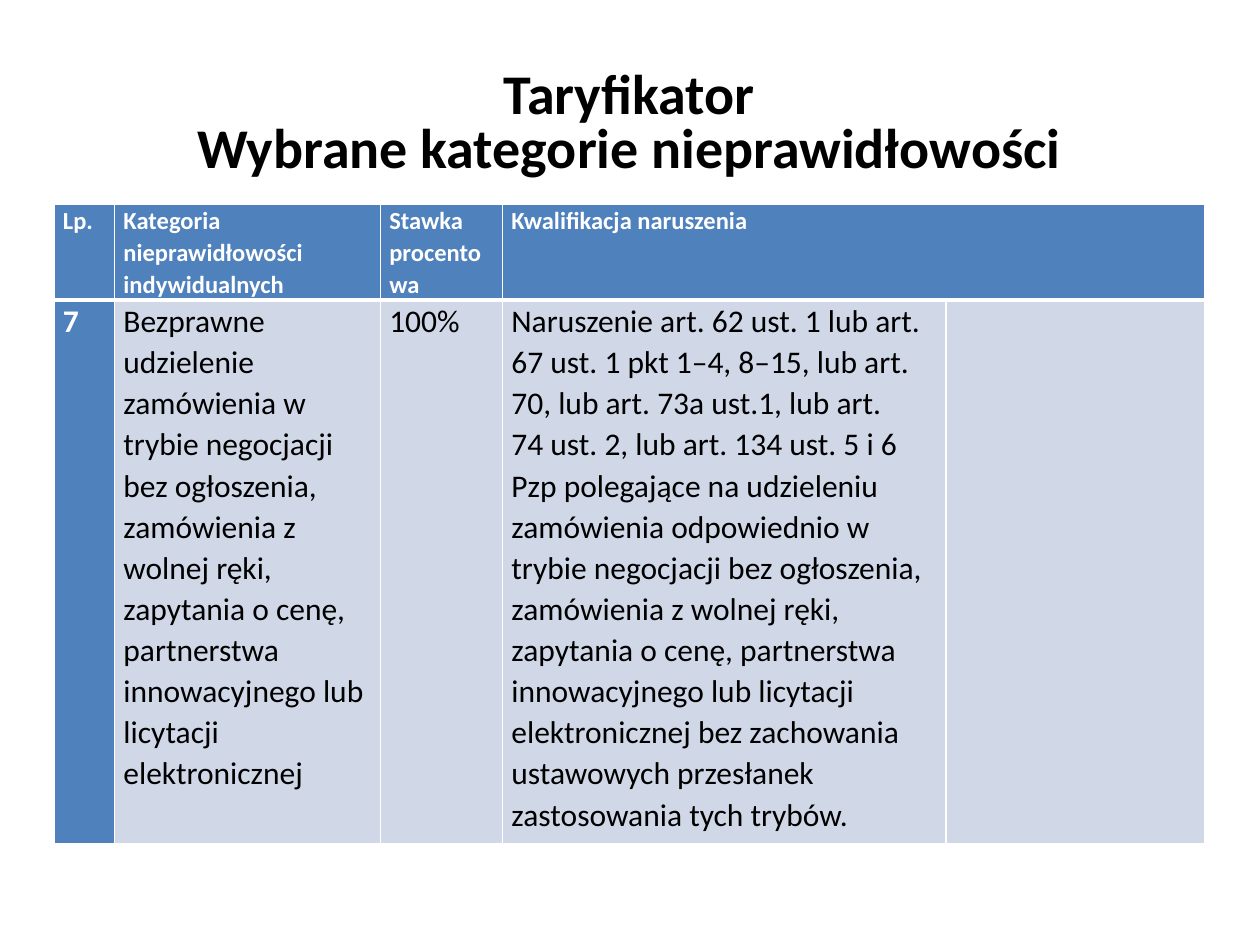
"""Build the tariff slide: a two-line title above a table of irregularity categories."""
from lxml.etree import SubElement
from pptx import Presentation
from pptx.dml.color import RGBColor as RGB
from pptx.enum.text import MSO_ANCHOR as ANCHOR, MSO_AUTO_SIZE as AUTOSIZE, PP_ALIGN as ALIGN
from pptx.oxml.ns import qn
from pptx.util import Inches, Pt

THEME = {
    "font": "Calibri",
    "title_size": 32, "header_size": 14, "body_size": 18,
    "dark": "000000", "light": "FFFFFF", "accent": "4F81BD", "band": "D0D8E8",
    "rule": 1, "header_rule": 3,
}

TITLE = ["Taryfikator", "Wybrane kategorie nieprawidłowości"]
HEADER = ["Lp.", "Kategoria nieprawidłowości indywidualnych", "Stawka procentowa",
          "Kwalifikacja naruszenia", ""]
ENTRY = [
    "7",
    ["Bezprawne udzielenie",
     "zamówienia w trybie negocjacji bez ogłoszenia, zamówienia z wolnej ręki, "
     "zapytania o cenę,",
     "partnerstwa innowacyjnego lub",
     "licytacji elektronicznej"],
    "100%",
    ["Naruszenie art. 62 ust. 1 lub art. 67 ust. 1 pkt 1–4, 8–15, lub art. 70, "
     "lub art. 73a ust.1, lub art.",
     "74 ust. 2, lub art. 134 ust. 5 i 6 Pzp polegające na udzieleniu zamówienia "
     "odpowiednio w trybie negocjacji bez ogłoszenia, zamówienia z wolnej ręki, "
     "zapytania o cenę, partnerstwa innowacyjnego lub licytacji elektronicznej bez "
     "zachowania ustawowych przesłanek zastosowania tych trybów."],
    "",
]
COLUMN_WIDTHS = [0.48, 2.11, 0.97, 3.52, 2.05]
ROW_HEIGHTS = [0.63, 4.32]
LEFT, TITLE_TOP, TABLE_TOP = 0.43, 0.52, 1.62
WIDTH = sum(COLUMN_WIDTHS)


def write(frame, lines, size, color, bold, spacing, align):
    frame.text = "\n".join(lines)
    for paragraph in frame.paragraphs:
        paragraph.alignment = align
        paragraph.line_spacing = spacing
        paragraph.space_before = paragraph.space_after = Pt(0)
        font = paragraph.font
        font.name, font.size, font.bold = THEME["font"], Pt(size), bold
        font.color.rgb = RGB.from_string(color)


def draw_borders(cell, top, bottom):
    widths = {"a:lnL": THEME["rule"], "a:lnR": THEME["rule"], "a:lnT": top, "a:lnB": bottom}
    for tag, width in widths.items():
        line = SubElement(cell._tc.get_or_add_tcPr(), qn(tag), w=str(Pt(width)))
        SubElement(SubElement(line, qn("a:solidFill")), qn("a:srgbClr"), val=THEME["light"])


def add_title(slide):
    title = slide.shapes.title
    title.left, title.top = Inches(LEFT), Inches(TITLE_TOP)
    title.width, title.height = Inches(WIDTH), Inches(1)
    frame = title.text_frame
    frame.word_wrap, frame.auto_size = True, AUTOSIZE.NONE
    frame.vertical_anchor = ANCHOR.TOP
    write(frame, TITLE, THEME["title_size"], THEME["dark"], True, 0.8, ALIGN.CENTER)


def add_tariff(slide):
    tariff = slide.shapes.add_table(
        len(ROW_HEIGHTS), len(COLUMN_WIDTHS), Inches(LEFT), Inches(TABLE_TOP),
        Inches(WIDTH), Inches(sum(ROW_HEIGHTS))).table
    for column, width in zip(tariff.columns, COLUMN_WIDTHS):
        column.width = Inches(width)
    for row, height in zip(tariff.rows, ROW_HEIGHTS):
        row.height = Inches(height)
    for r, entries in enumerate([HEADER, ENTRY]):
        is_header = r == 0
        size = THEME["header_size" if is_header else "body_size"]
        rules = (THEME["rule"], THEME["header_rule"])
        for c, entry in enumerate(entries):
            cell = tariff.cell(r, c)
            emphasised = is_header or c == 0
            cell.margin_left = cell.margin_right = Inches(0.07)
            cell.margin_top = cell.margin_bottom = 0
            write(cell.text_frame, [entry] if isinstance(entry, str) else entry, size,
                  THEME["light" if emphasised else "dark"], emphasised, 1.07, ALIGN.LEFT)
            draw_borders(cell, *(rules if is_header else rules[::-1]))
            cell.fill.solid()
            cell.fill.fore_color.rgb = RGB.from_string(THEME["accent" if emphasised else "band"])
    tariff.cell(0, 3).merge(tariff.cell(0, 4))


def main():
    deck = Presentation()
    deck.slide_width, deck.slide_height = Inches(10), Inches(7.5)
    slide = deck.slides.add_slide(deck.slide_layouts[5])
    add_title(slide)
    add_tariff(slide)
    deck.save("out.pptx")


if __name__ == "__main__":
    main()
